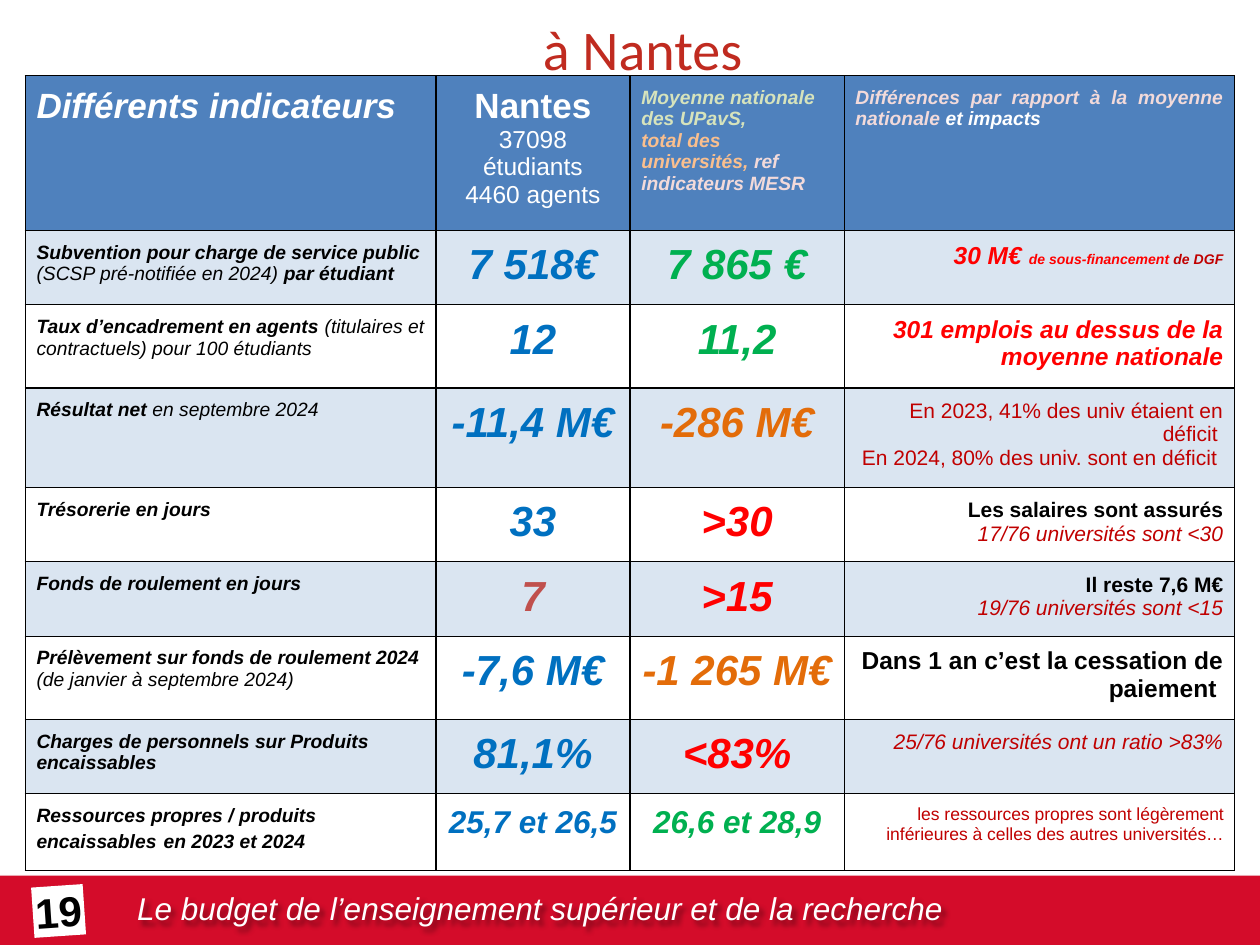
from lxml import etree
from pptx import Presentation
from pptx.dml.color import RGBColor
from pptx.enum.shapes import MSO_SHAPE
from pptx.enum.text import MSO_ANCHOR, PP_ALIGN
from pptx.oxml import parse_xml
from pptx.oxml.ns import nsdecls
from pptx.util import Inches, Pt


class Theme:
    head_font, body_font = "Calibri", "Arial"
    black, white, band, title = "000000", "FFFFFF", "D40C2A", "C02B20"
    header, stripe = "4F81BD", "DAE5F1"
    blue, green, orange, brick = "0070C0", "00B050", "E36C09", "C0504D"
    red, dark_red = "FF0000", "C00000"
    pale_green, pale_orange, pale_pink = "D6E3BC", "FABF8E", "F2DADA"
    title_size, figure, heading, subheading = 32, 24, 20, 18
    large, medium, label, small, tiny = 14, 12, 11, 10, 8


T = Theme
LEFT, CENTER, RIGHT, JUSTIFY = PP_ALIGN.LEFT, PP_ALIGN.CENTER, PP_ALIGN.RIGHT, PP_ALIGN.JUSTIFY


def write(tf, paragraphs, align, font=T.body_font):
    """Fill tf; each paragraph is a list of (text, size, colour, style), style using b and i."""
    for n, runs in enumerate(paragraphs):
        p = tf.paragraphs[0] if n == 0 else tf.add_paragraph()
        p.alignment = align
        p.font.name = font
        for text, size, colour, style in runs:
            r = p.add_run()
            r.text = text
            r.font.size = Pt(size)
            r.font.color.rgb = RGBColor.from_string(colour)
            r.font.bold = "b" in style
            r.font.italic = "i" in style


def add_shadow(s, colour, alpha, blur, dist, angle):
    s.shadow.inherit = False
    effects = s._element.spPr.find("{*}effectLst")
    effects.append(parse_xml(
        f'<a:outerShdw {nsdecls("a")} blurRad="{Pt(blur)}" dist="{Pt(dist)}" '
        f'dir="{angle * 60000}" rotWithShape="0"><a:srgbClr val="{colour}">'
        f'<a:alpha val="{alpha * 1000}"/></a:srgbClr></a:outerShdw>'))


prs = Presentation()
prs.slide_width, prs.slide_height = Inches(10), Inches(7.5)
slide = prs.slides.add_slide(prs.slide_layouts[5])

# Title
title = slide.shapes.title
title.left, title.top, title.width, title.height = Inches(0.1), Inches(0.03), Inches(10), Inches(0.71)
title.text_frame.vertical_anchor = MSO_ANCHOR.MIDDLE
write(title.text_frame, [[("à Nantes", T.title_size, T.title, "")]], CENTER, T.head_font)

# Footer band, its caption and the page number
band = slide.shapes.add_shape(MSO_SHAPE.RECTANGLE, 0, Inches(6.95), Inches(10), Inches(0.55))
caption = slide.shapes.add_textbox(Inches(0.99), Inches(7.01), Inches(7.28), Inches(0.4))
number = slide.shapes.add_shape(MSO_SHAPE.RECTANGLE, Inches(0.26), Inches(7.03), Inches(0.41), Inches(0.4))
for s, colour in ((band, T.band), (number, T.white)):
    s.fill.solid()
    s.fill.fore_color.rgb = RGBColor.from_string(colour)
    s.line.fill.background()
add_shadow(band, "808080", 35, 3.1, 1.8, 90)
add_shadow(caption, T.black, 43, 3, 3, 45)
caption.text_frame.word_wrap = True
write(caption.text_frame,
      [[("Le budget de l’enseignement supérieur et de la recherche", T.subheading, T.white, "i")]], LEFT)
number.shadow.inherit = False
number.rotation = 356.1
tf = number.text_frame
tf.margin_left = tf.margin_right = tf.margin_top = tf.margin_bottom = 0
tf.vertical_anchor = MSO_ANCHOR.MIDDLE
tf.word_wrap = False
write(tf, [[("19", T.figure, T.black, "b")]], CENTER)

# Table content: header, then (indicator, Nantes, national average, impact)
header = [
    [[("Différents indicateurs", T.heading, T.white, "bi")]],
    [[("Nantes", T.heading, T.white, "b")],
     [("37098 étudiants", T.large, T.white, "")],
     [("4460 agents", T.large, T.white, "")]],
    [[("Moyenne nationale des UPavS,", T.label, T.pale_green, "bi")],
     [("total des universités, ", T.label, T.pale_orange, "bi"),
      ("ref indicateurs MESR", T.label, T.pale_pink, "bi")]],
    [[("Différences par rapport à la moyenne nationale ", T.label, T.pale_pink, "bi"),
      ("et impacts", T.label, T.white, "bi")]],
]
# Indicator runs are (text, style); figures are (text, colour)
indicators = [
    ([("Subvention pour charge de service public ", "bi"),
      ("(SCSP pré-notifiée en 2024) ", "i"), ("par étudiant", "bi")],
     ("7\u00a0518€", T.blue), ("7\u00a0865 €", T.green),
     [[("30\u00a0M€ ", T.large, T.red, "bi"), ("de sous-financement ", T.tiny, T.red, "bi"),
       ("de DGF", T.tiny, T.dark_red, "bi")]]),
    ([("Taux d’encadrement en agents ", "bi"),
      ("(titulaires et contractuels) pour 100 étudiants", "i")],
     ("12", T.blue), ("11,2", T.green),
     [[("301 emplois au dessus de la moyenne nationale", T.large, T.red, "bi")]]),
    ([("Résultat net ", "bi"), ("en septembre 2024", "i")],
     ("-11,4 M€", T.blue), ("-286 M€", T.orange),
     [[("En 2023, 41% des univ étaient en déficit ", T.medium, T.dark_red, "")],
      [("En 2024, 80% des univ. sont en déficit ", T.medium, T.dark_red, "")]]),
    ([("Trésorerie en jours", "bi")], ("33", T.blue), (">30", T.red),
     [[("Les salaires sont assurés", T.medium, T.black, "b")],
      [("17/76 universités sont <30", T.medium, T.dark_red, "i")]]),
    ([("Fonds de roulement en jours", "bi")], ("7", T.brick), (">15", T.red),
     [[("Il reste 7,6 M€", T.medium, T.black, "b")],
      [("19/76 universités sont <15", T.medium, T.dark_red, "i")]]),
    ([("Prélèvement sur fonds de roulement 2024 ", "bi"), ("(de janvier à septembre 2024)", "i")],
     ("-7,6 M€", T.blue), ("-1\u00a0265 M€", T.orange),
     [[("Dans 1 an c’est la cessation de paiement ", T.large, T.black, "b")]]),
    ([("Charges de personnels sur Produits encaissables", "bi")],
     ("81,1%", T.blue), ("<83%", T.red),
     [[("25/76 universités ont un ratio >83%", T.medium, T.dark_red, "i")]]),
    ([("Ressources propres / produits encaissables", "bi"), (" ", ""), ("en 2023 et 2024", "bi")],
     ("25,7 et 26,5", T.blue), ("26,6 et 28,9", T.green),
     [[("les ressources propres sont légèrement inférieures à celles des autres universités…",
        T.small, T.dark_red, "")]]),
]
rows = [header]
for label, local, national, impact in indicators:
    size = T.subheading if " et " in local[0] else T.figure
    rows.append([
        [[(text, T.label if text.strip() else T.large, T.black, style) for text, style in label]],
        [[(local[0], size, local[1], "bi")]],
        [[(national[0], size, national[1], "bi")]],
        impact,
    ])

# Table
col_widths = [3.26, 1.54, 1.7, 3.1]
row_heights = [1.23, 0.59, 0.66, 0.79, 0.59, 0.59, 0.66, 0.59, 0.61]
table = slide.shapes.add_table(len(rows), len(col_widths), Inches(0.2), Inches(0.6),
                               Inches(sum(col_widths)), Inches(sum(row_heights))).table
table.horz_banding = False
for col, width in zip(table.columns, col_widths):
    col.width = Inches(width)
for i, (row, height) in enumerate(zip(rows, row_heights)):
    table.rows[i].height = Inches(height)
    fill = T.header if i == 0 else T.stripe if i % 2 else T.white
    aligns = (JUSTIFY, CENTER, LEFT, JUSTIFY) if i == 0 else (LEFT, CENTER, CENTER, RIGHT)
    for j, (paragraphs, align) in enumerate(zip(row, aligns)):
        cell = table.cell(i, j)
        cell.margin_left = cell.margin_right = cell.margin_top = cell.margin_bottom = Inches(0.09)
        cell.fill.solid()
        cell.fill.fore_color.rgb = RGBColor.from_string(fill)
        write(cell.text_frame, paragraphs, align)
        for n, side in enumerate("LRTB"):
            cell._tc.get_or_add_tcPr().insert(n, etree.fromstring(
                f'<a:ln{side} {nsdecls("a")} w="{Pt(0.75)}"><a:solidFill>'
                f'<a:srgbClr val="{T.black}"/></a:solidFill></a:ln{side}>'))

prs.save("out.pptx")
